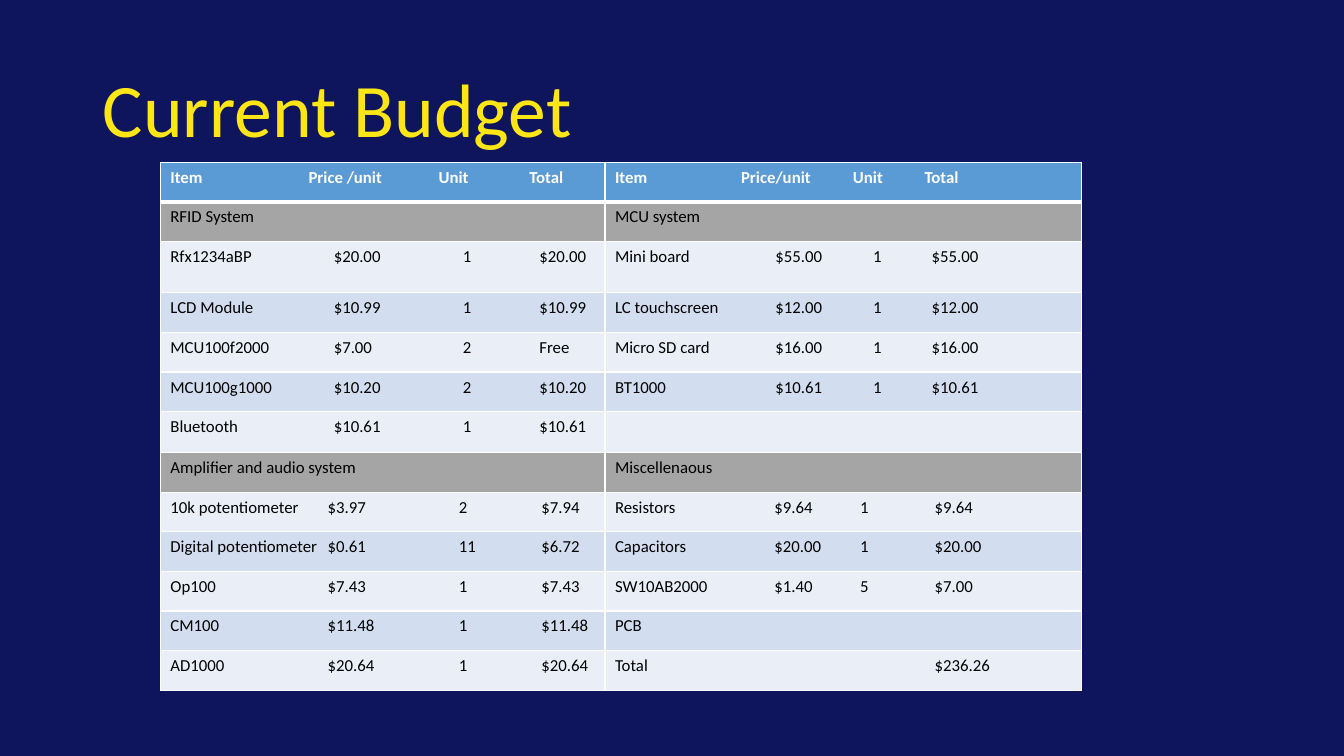
from lxml import etree
from pptx import Presentation
from pptx.dml.color import RGBColor
from pptx.enum import text
from pptx.oxml import ns
from pptx.util import Inches, Pt

FONT = "Calibri"
WHITE, BLACK = "FFFFFF", "000000"
HEADER_FILL, SECTION_FILL = "5B9BD5", "A5A5A5"
BAND_FILLS = ("D2DEEF", "EAEFF7")
SECTION_ROWS = (1, 7)

# Tab positions of price, unit and total in the left and right columns
HEADER_TABS = ((1.37, 2.66, 3.56), (1.25, 2.36, 3.07))
UPPER_TABS = ((1.62, 2.9, 3.66), (1.59, 2.56, 3.14))
LOWER_TABS = ((1.56, 2.86, 3.68), (1.58, 2.43, 3.17))

BUDGET = [
    (("Item", "Price /unit", "Unit", "Total"), ("Item", "Price/unit", "Unit", "Total")),
    (("RFID System",), ("MCU system",)),
    (("Rfx1234aBP", "$20.00", "1", "$20.00"), ("Mini board", "$55.00", "1", "$55.00")),
    (("LCD Module", "$10.99", "1", "$10.99"), ("LC touchscreen", "$12.00", "1", "$12.00")),
    (("MCU100f2000", "$7.00", "2", "Free"), ("Micro SD card", "$16.00", "1", "$16.00")),
    (("MCU100g1000", "$10.20", "2", "$10.20"), ("BT1000", "$10.61", "1", "$10.61")),
    (("Bluetooth", "$10.61", "1", "$10.61"), ()),
    (("Amplifier and audio system",), ("Miscellenaous",)),
    (("10k potentiometer", "$3.97", "2", "$7.94"), ("Resistors", "$9.64", "1", "$9.64")),
    (("Digital potentiometer", "$0.61", "11", "$6.72"), ("Capacitors", "$20.00", "1", "$20.00")),
    (("Op100", "$7.43", "1", "$7.43"), ("SW10AB2000", "$1.40", "5", "$7.00")),
    (("CM100", "$11.48", "1", "$11.48"), ("PCB",)),
    (("AD1000", "$20.64", "1", "$20.64"), ("Total", "", "", "$236.26")),
]


def colour(value):
    return RGBColor.from_string(value)


def format_spans(para, size, value, bold=False):
    for span in para.runs:
        span.font.name = FONT
        span.font.size = Pt(size)
        span.font.bold = bold
        span.font.color.rgb = colour(value)


def set_tabs(para, positions):
    tabs = etree.SubElement(para._p.get_or_add_pPr(), ns.qn("a:tabLst"))
    for position in positions:
        etree.SubElement(tabs, ns.qn("a:tab"), pos=str(Inches(position)), algn="l")


def set_border(cell, side, width):
    line = etree.SubElement(cell._tc.get_or_add_tcPr(), ns.qn("a:ln" + side), w=str(Pt(width)))
    fill = etree.SubElement(line, ns.qn("a:solidFill"))
    etree.SubElement(fill, ns.qn("a:srgbClr"), val=WHITE)


def add_title(page, words):
    title = page.shapes.title
    title.left, title.top = Inches(0.92), Inches(0.4)
    title.width, title.height = Inches(11.5), Inches(1.45)
    frame = title.text_frame
    frame.text = words
    frame.auto_size = text.MSO_AUTO_SIZE.NONE
    frame.vertical_anchor = text.MSO_ANCHOR.MIDDLE
    para = frame.paragraphs[0]
    para.alignment = text.PP_ALIGN.LEFT
    para.line_spacing = 0.9
    format_spans(para, 54, "FEE614")


def row_style(row):
    """Return the fill and the tab positions of a row."""
    if row == 0:
        return HEADER_FILL, HEADER_TABS
    tabs = UPPER_TABS if row < SECTION_ROWS[1] else LOWER_TABS
    if row in SECTION_ROWS:
        return SECTION_FILL, tabs
    return BAND_FILLS[row % 2 == 0], tabs


def fill_cell(cell, entries, row, fill, tabs):
    is_header = row == 0
    para = cell.text_frame.paragraphs[0]
    para.text = "\t".join(entries)
    if len(entries) > 1:
        set_tabs(para, tabs)
    format_spans(para, 12, WHITE if is_header else BLACK, is_header)
    # Borders come before the fill in the cell properties
    for side in "LRTB":
        under_header = (row, side) in ((0, "B"), (1, "T"))
        set_border(cell, side, 3 if under_header else 1)
    cell.fill.solid()
    cell.fill.fore_color.rgb = colour(fill)


def add_budget_table(page):
    height = Inches(5.11)
    table = page.shapes.add_table(
        len(BUDGET), 2, Inches(1.59), Inches(1.61), Inches(9.14), height).table
    for column, width in zip(table.columns, (4.41, 4.73)):
        column.width = Inches(width)
    for row, halves in enumerate(BUDGET):
        table.rows[row].height = height // len(BUDGET)
        fill, tabs = row_style(row)
        for column, entries in enumerate(halves):
            fill_cell(table.cell(row, column), entries, row, fill, tabs[column])
    # The first item row is taller
    table.rows[2].height = Inches(0.51)


def main():
    deck = Presentation()
    deck.slide_width, deck.slide_height = Inches(13.33), Inches(7.5)
    page = deck.slides.add_slide(deck.slide_layouts[5])
    page.background.fill.solid()
    page.background.fill.fore_color.rgb = colour("0E155D")
    add_title(page, "Current Budget")
    add_budget_table(page)
    deck.save("out.pptx")


if __name__ == "__main__":
    main()
